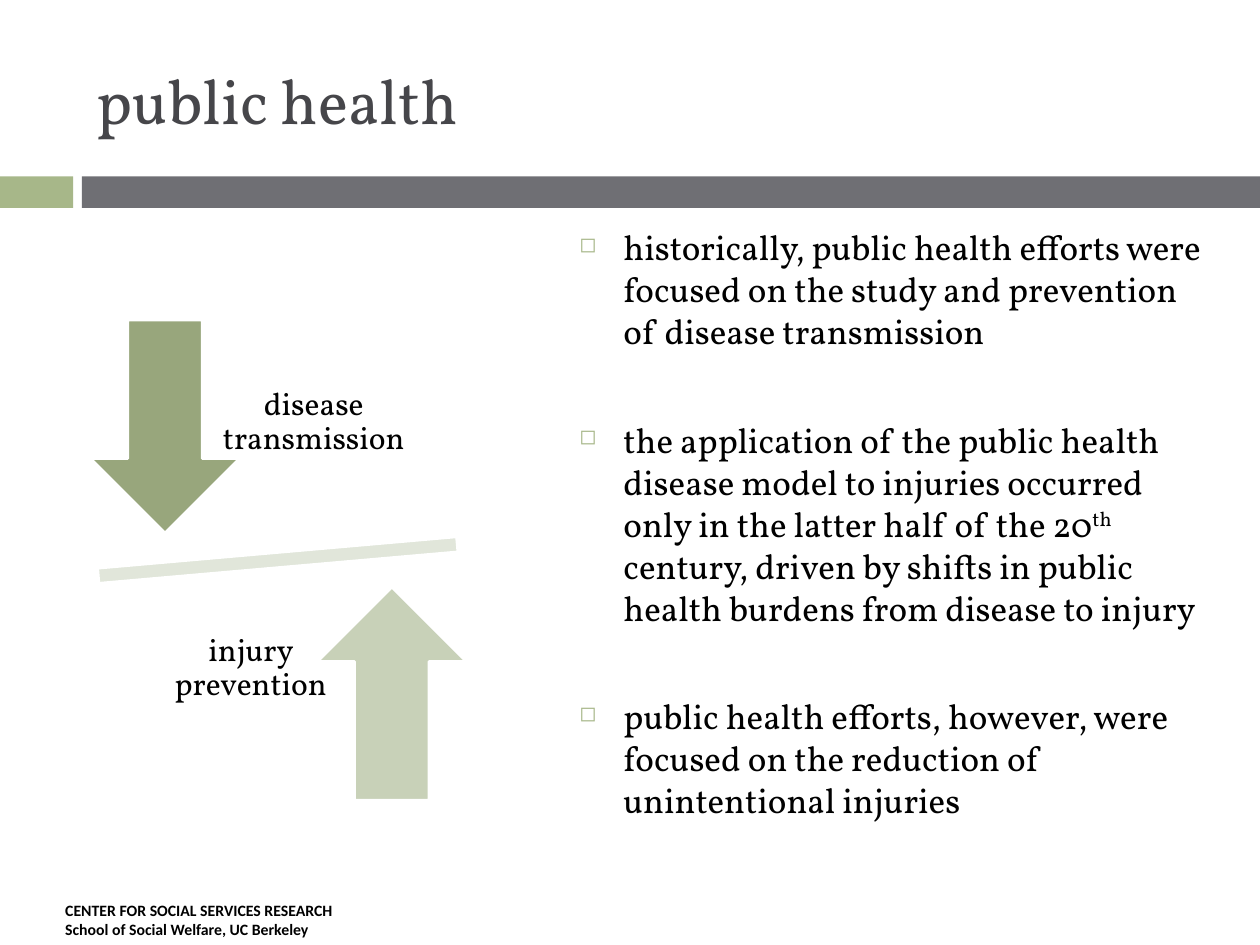
from lxml import etree
from pptx import Presentation
from pptx.dml.color import RGBColor
from pptx.enum.shapes import MSO_SHAPE
from pptx.enum.text import MSO_ANCHOR, MSO_AUTO_SIZE, PP_ALIGN
from pptx.oxml.ns import qn
from pptx.util import Pt

LEFT, CENTER = PP_ALIGN.LEFT, PP_ALIGN.CENTER
TOP, MIDDLE = MSO_ANCHOR.TOP, MSO_ANCHOR.MIDDLE
SERIF, SANS = "Vollkorn", "Calibri"
GREEN, GREY, BLACK, WHITE = "A7B789", "6F6F74", "000000", "FFFFFF"

# Content: each paragraph is a list of (text, superscript) spans
TITLE = "public health"
FOOTER = "CENTER FOR SOCIAL SERVICES RESEARCH\vSchool of Social Welfare, UC Berkeley"
POINTS = [
    [("historically, public health efforts were focused on the study and "
      "prevention of disease transmission", False)],
    [("the application of the public health disease model to injuries occurred "
      "only in the latter half of the 20", False),
     ("th", True),
     (" century, driven by shifts in public health burdens from disease to injury", False)],
    [("public health efforts, however, were focused on the reduction of "
      "unintentional injuries", False)],
]

# Shapes: kind, (left, top, width, height) in points, fill, line, rotation
BANDS = [
    (MSO_SHAPE.RECTANGLE, (0, 100.8, 41.8, 18), GREEN, None, 0),
    (MSO_SHAPE.RECTANGLE, (46.8, 100.8, 673.2, 18), GREY, None, 0),
]
BALANCE = [
    (MSO_SHAPE.MATH_MINUS, (18.7, 301.7, 280.1, 36.7), "E1E6DA", WHITE, 355),
    (MSO_SHAPE.DOWN_ARROW, (51.8, 182.9, 85, 121.7), "98A67C", WHITE, 0),
    (MSO_SHAPE.UP_ARROW, (181.4, 335.5, 85, 121.7), "C8D1B8", WHITE, 0),
]
LABELS = [
    ("disease transmission", (106.6, 177.8, 145.4, 127.4)),
    ("injury prevention", (84.2, 318.2, 118.1, 127.4)),
]


def color(value):
    return RGBColor.from_string(value)


def place(item, area):
    item.left, item.top, item.width, item.height = map(Pt, area)


def add_figure(page, kind, area, fill, line, rotation):
    figure = page.shapes.add_shape(kind, *map(Pt, area))
    figure.shadow.inherit = False
    figure.rotation = rotation
    figure.fill.solid()
    figure.fill.fore_color.rgb = color(fill)
    if line:
        figure.line.color.rgb = color(line)
        figure.line.width = Pt(1.5)
    else:
        figure.line.fill.background()


def add_bullet(para):
    props = para._p.get_or_add_pPr()
    props.set("marL", str(Pt(25.2)))
    props.set("indent", str(-Pt(25.2)))
    tint = etree.SubElement(props, qn("a:buClr"))
    etree.SubElement(tint, qn("a:srgbClr")).set("val", GREEN)
    etree.SubElement(props, qn("a:buSzPct")).set("val", "60000")
    etree.SubElement(props, qn("a:buChar")).set("char", "◻")


def set_text(box, text, size, font=SERIF, ink=BLACK, bold=False, align=LEFT,
             anchor=TOP, spacing=None, inset=None, gap=0, bullet=False):
    """Fill a box with a string or a list of paragraphs made of spans."""
    frame = box.text_frame
    frame.word_wrap = True
    frame.auto_size = MSO_AUTO_SIZE.NONE
    frame.vertical_anchor = anchor
    if inset is not None:
        frame.margin_left = frame.margin_right = Pt(inset)
        frame.margin_top = frame.margin_bottom = Pt(inset)
    paragraphs = [[(text, False)]] if isinstance(text, str) else text
    for index, spans in enumerate(paragraphs):
        para = frame.add_paragraph() if index else frame.paragraphs[0]
        para.alignment = align
        para.space_before = Pt(gap if index else 0)
        if spacing:
            para.line_spacing = spacing
        if bullet:
            add_bullet(para)
        para.font.size, para.font.name, para.font.bold = Pt(size), font, bold
        para.font.color.rgb = color(ink)
        for content, raised in spans:
            for number, part in enumerate(content.split("\v")):
                if number:
                    para.add_line_break()
                span = para.add_run()
                span.text = part
                span.font.size, span.font.name, span.font.bold = Pt(size), font, bold
                span.font.color.rgb = color(ink)
                if raised:
                    span.font._element.set("baseline", "30000")


def add_text(page, area, text, size, **style):
    box = page.shapes.add_textbox(*map(Pt, area))
    set_text(box, text, size, **style)


def main():
    deck = Presentation()
    deck.slide_width, deck.slide_height = Pt(720), Pt(540)
    page = deck.slides.add_slide(deck.slide_layouts[5])

    # Bands and footer
    for band in BANDS:
        add_figure(page, *band)
    add_text(page, (30.2, 511.2, 210.2, 28.8), FOOTER, 9, font=SANS, bold=True)

    # Title and points
    title = page.shapes.title
    place(title, (48.2, 18, 642.2, 77.8))
    set_text(title, TITLE, 36, ink="46464A", anchor=MIDDLE)
    add_text(page, (324, 125.3, 372.2, 360), POINTS, 20, gap=38, bullet=True)

    # Balance of arrows with labels
    for figure in BALANCE:
        add_figure(page, *figure)
    for text, area in LABELS:
        add_text(page, area, text, 18, align=CENTER, anchor=MIDDLE,
                 spacing=0.9, inset=10)

    deck.save("out.pptx")


if __name__ == "__main__":
    main()
